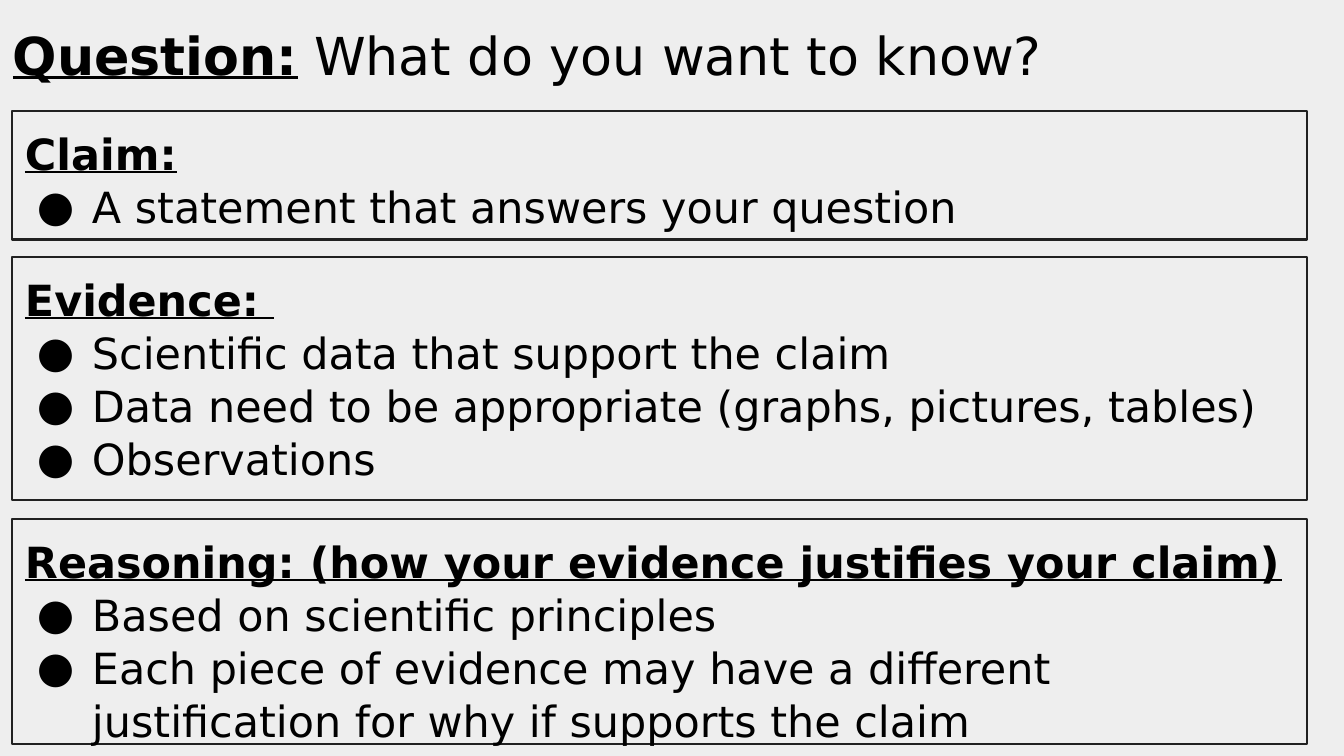
from lxml import etree
from pptx import Presentation
from pptx.dml.color import RGBColor
from pptx.enum.shapes import MSO_SHAPE
from pptx.enum.text import MSO_ANCHOR, PP_ALIGN
from pptx.oxml.ns import qn
from pptx.util import Pt

PX = 6804
RECT = MSO_SHAPE.RECTANGLE
TOP = MSO_ANCHOR.TOP
LEFT = PP_ALIGN.LEFT
BLACK = RGBColor(0, 0, 0)
EDGE = RGBColor(0x21, 0x21, 0x21)
PAPER = RGBColor(0xEE, 0xEE, 0xEE)
FONT = "DejaVu Sans"
HEAD = {"bold": True, "underline": True}
BODY = {"bold": False, "underline": False}


def add_run(para, text, size, style):
    run = para.add_run()
    run.text = text
    run.font.color.rgb = BLACK
    for key, value in {"name": FONT, "size": Pt(size), **style}.items():
        setattr(run.font, key, value)


def set_frame(frame, top):
    form = {"word_wrap": True, "vertical_anchor": TOP, "margin_top": top * PX,
            "margin_left": 13 * PX, "margin_right": 13 * PX, "margin_bottom": 13 * PX}
    for key, value in form.items():
        setattr(frame, key, value)


deck = Presentation()
deck.slide_width = 1344 * PX
deck.slide_height = 756 * PX
slide = deck.slides.add_slide(deck.slide_layouts[6])
slide.background.fill.solid()
slide.background.fill.fore_color.rgb = PAPER

title = slide.shapes.add_textbox(0, 0, 1344 * PX, 94 * PX)
set_frame(title.text_frame, 23)
para = title.text_frame.paragraphs[0]
add_run(para, "Question:", 28, HEAD)
add_run(para, " What do you want to know?", 28, BODY)

panels = [
    (111, 129, "Claim:", ["A statement that answers your question"]),
    (257, 243, "Evidence: ", [
        "Scientific data that support the claim",
        "Data need to be appropriate (graphs, pictures, tables)",
        "Observations",
    ]),
    (519, 225, "Reasoning: (how your evidence justifies your claim)", [
        "Based on scientific principles",
        "Each piece of evidence may have a different justification for why if supports the claim",
    ]),
]

for top, height, head, points in panels:
    panel = slide.shapes.add_shape(RECT, 12 * PX, top * PX, 1295 * PX, height * PX)
    panel.shadow.inherit = False
    panel.fill.background()
    panel.line.color.rgb = EDGE
    panel.line.width = Pt(1.5)
    frame = panel.text_frame
    set_frame(frame, 15)
    para = frame.paragraphs[0]
    para.alignment = LEFT
    para.line_spacing = 1.03
    add_run(para, head, 23, HEAD)
    for point in points:
        para = frame.add_paragraph()
        para.alignment = LEFT
        para.line_spacing = 1.03
        add_run(para, point, 23, BODY)
        props = para._p.get_or_add_pPr()
        props.set("marL", str(67 * PX))
        props.set("indent", str(-55 * PX))
        tint = etree.SubElement(props, qn("a:buClr"))
        etree.SubElement(tint, qn("a:srgbClr")).set("val", str(BLACK))
        etree.SubElement(props, qn("a:buFont")).set("typeface", FONT)
        etree.SubElement(props, qn("a:buChar")).set("char", "●")

deck.save("out.pptx")
